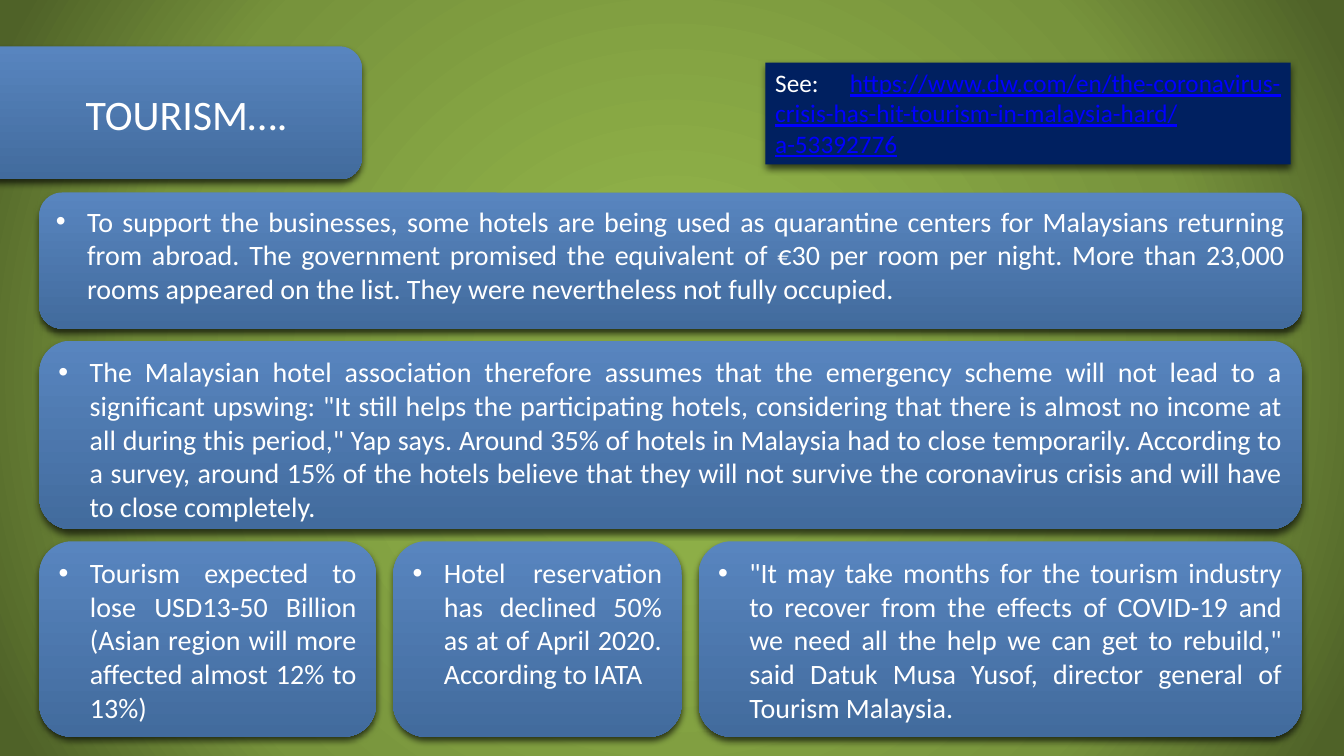
import pptx
from pptx.dml.color import RGBColor
from pptx.enum.shapes import MSO_SHAPE
from pptx.enum.text import MSO_ANCHOR, PP_ALIGN
from pptx.oxml import parse_xml
from pptx.oxml.ns import nsdecls, qn
from pptx.util import Inches, Pt

TITLE = "TOURISM…."
SOURCE_LABEL = "See: "
SOURCE_ADDRESS = ("https://www.dw.com/en/the-coronavirus-crisis-has-hit-"
                  "tourism-in-malaysia-hard/a-53392776")

# Each row: top, height, and its cards as (width, statement)
CARD_ROWS = [
    (1.91, 1.35, [
        (12.52, "To support the businesses, some hotels are being used as quarantine "
                "centers for Malaysians returning from abroad. The government promised "
                "the equivalent of €30 per room per night. More than 23,000 rooms "
                "appeared on the list. They were nevertheless not fully occupied."),
    ]),
    (3.38, 1.87, [
        (12.52, "The Malaysian hotel association therefore assumes that the emergency "
                "scheme will not lead to a significant upswing: \"It still helps the "
                "participating hotels, considering that there is almost no income at all "
                "during this period,\" Yap says. Around 35% of hotels in Malaysia had to "
                "close temporarily. According to a survey, around 15% of the hotels "
                "believe that they will not survive the coronavirus crisis and will have "
                "to close completely."),
    ]),
    (5.37, 1.94, [
        (3.34, "Tourism expected to lose USD13-50 Billion (Asian region will more "
               "affected almost 12% to 13%)"),
        (2.86, "Hotel reservation has declined 50% as at of April 2020. "
               "According to IATA"),
        (5.98, "\"It may take months for the tourism industry to recover from the "
               "effects of COVID-19 and we need all the help we can get to rebuild,\" "
               "said Datuk Musa Yusof, director general of Tourism Malaysia."),
    ]),
]
CARD_LEFT = 0.39
CARD_GAP = 0.17
BULLET_INDENT = Inches(0.31)

FONT = "Calibri"
WHITE = RGBColor(0xFF, 0xFF, 0xFF)
LINK_BLUE = RGBColor(0x00, 0x00, 0xFF)
NAVY = RGBColor(0x00, 0x20, 0x60)
CARD_BLUES = [RGBColor(0x58, 0x85, 0xBF), RGBColor(0x42, 0x6B, 0x9D)]
BACKDROP_GREENS = [
    (0, RGBColor(0x8D, 0xAE, 0x47)),
    (23, RGBColor(0x8D, 0xAE, 0x47)),
    (69, RGBColor(0x77, 0x93, 0x3C)),
    (97, RGBColor(0x4F, 0x62, 0x28)),
]


def paint_backdrop(slide):
    """Fill the background with a gradient spreading from the centre."""
    slide.background.fill.gradient()
    linear = slide.element.find(".//" + qn("a:gradFill"))
    stops = "".join(
        f'<a:gs pos="{percent * 1000}"><a:srgbClr val="{green}"/></a:gs>'
        for percent, green in BACKDROP_GREENS)
    radial = parse_xml(
        f'<a:gradFill {nsdecls("a")} rotWithShape="1"><a:gsLst>{stops}</a:gsLst>'
        '<a:path path="circle"><a:fillToRect l="50000" t="50000" r="50000" b="50000"/>'
        '</a:path></a:gradFill>')
    linear.getparent().replace(linear, radial)


def add_panel(slide, preset, left, top, width, height):
    """Add an unoutlined shape with a soft shadow below it."""
    panel = slide.shapes.add_shape(
        preset, Inches(left), Inches(top), Inches(width), Inches(height))
    panel.line.fill.background()
    panel.shadow.inherit = False
    panel.element.spPr.find(qn("a:effectLst")).append(parse_xml(
        f'<a:outerShdw {nsdecls("a")} blurRad="{Pt(5)}" dist="{Pt(3)}" dir="5400000" '
        'rotWithShape="0"><a:srgbClr val="000000"><a:alpha val="65000"/></a:srgbClr>'
        '</a:outerShdw>'))
    return panel


def add_blue_card(slide, left, top, width, height):
    card = add_panel(slide, MSO_SHAPE.ROUNDED_RECTANGLE, left, top, width, height)
    card.fill.gradient()
    card.fill.gradient_angle = 270
    for stop, blue in zip(card.fill.gradient_stops, CARD_BLUES):
        stop.color.rgb = blue
    return card


def style(font, size, color=WHITE):
    font.name = FONT
    font.size = Pt(size)
    font.color.rgb = color


def write_statement(card, statement):
    """Write one justified bullet from the top of the card."""
    card.text_frame.vertical_anchor = MSO_ANCHOR.TOP
    card.text_frame.text = statement
    paragraph = card.text_frame.paragraphs[0]
    paragraph.alignment = PP_ALIGN.JUSTIFY
    paragraph.space_after = Pt(10)
    properties = paragraph._p.get_or_add_pPr()
    properties.set("marL", str(BULLET_INDENT))
    properties.set("indent", str(-BULLET_INDENT))
    for bullet in (f'<a:buClr {nsdecls("a")}><a:srgbClr val="{WHITE}"/></a:buClr>',
                   f'<a:buFont {nsdecls("a")} typeface="Arial"/>',
                   f'<a:buChar {nsdecls("a")} char="•"/>'):
        properties.append(parse_xml(bullet))
    style(paragraph.runs[0].font, 20)


def add_title(slide):
    add_blue_card(slide, -0.34, 0.46, 3.93, 1.32)
    title = slide.shapes.add_textbox(
        Inches(0.75), Inches(0.44), Inches(2.55), Inches(1.38))
    title.text_frame.word_wrap = True
    title.text_frame.vertical_anchor = MSO_ANCHOR.MIDDLE
    title.text_frame.text = TITLE
    style(title.text_frame.paragraphs[0].runs[0].font, 30)


def add_source(slide):
    source = add_panel(slide, MSO_SHAPE.RECTANGLE, 7.59, 0.62, 5.21, 1.01)
    source.fill.solid()
    source.fill.fore_color.rgb = NAVY
    source.text_frame.vertical_anchor = MSO_ANCHOR.TOP
    paragraph = source.text_frame.paragraphs[0]
    paragraph.alignment = PP_ALIGN.JUSTIFY
    for words, color in ((SOURCE_LABEL, WHITE), (SOURCE_ADDRESS, LINK_BLUE)):
        run = paragraph.add_run()
        run.text = words
        style(run.font, 18, color)
    run.font.underline = True


def main():
    deck = pptx.Presentation()
    deck.slide_width, deck.slide_height = Inches(13.33), Inches(7.5)
    slide = deck.slides.add_slide(deck.slide_layouts[6])
    paint_backdrop(slide)
    add_title(slide)
    for top, height, cards in CARD_ROWS:
        left = CARD_LEFT
        for width, statement in cards:
            write_statement(add_blue_card(slide, left, top, width, height), statement)
            left += width + CARD_GAP
    add_source(slide)
    deck.save("out.pptx")


if __name__ == "__main__":
    main()
